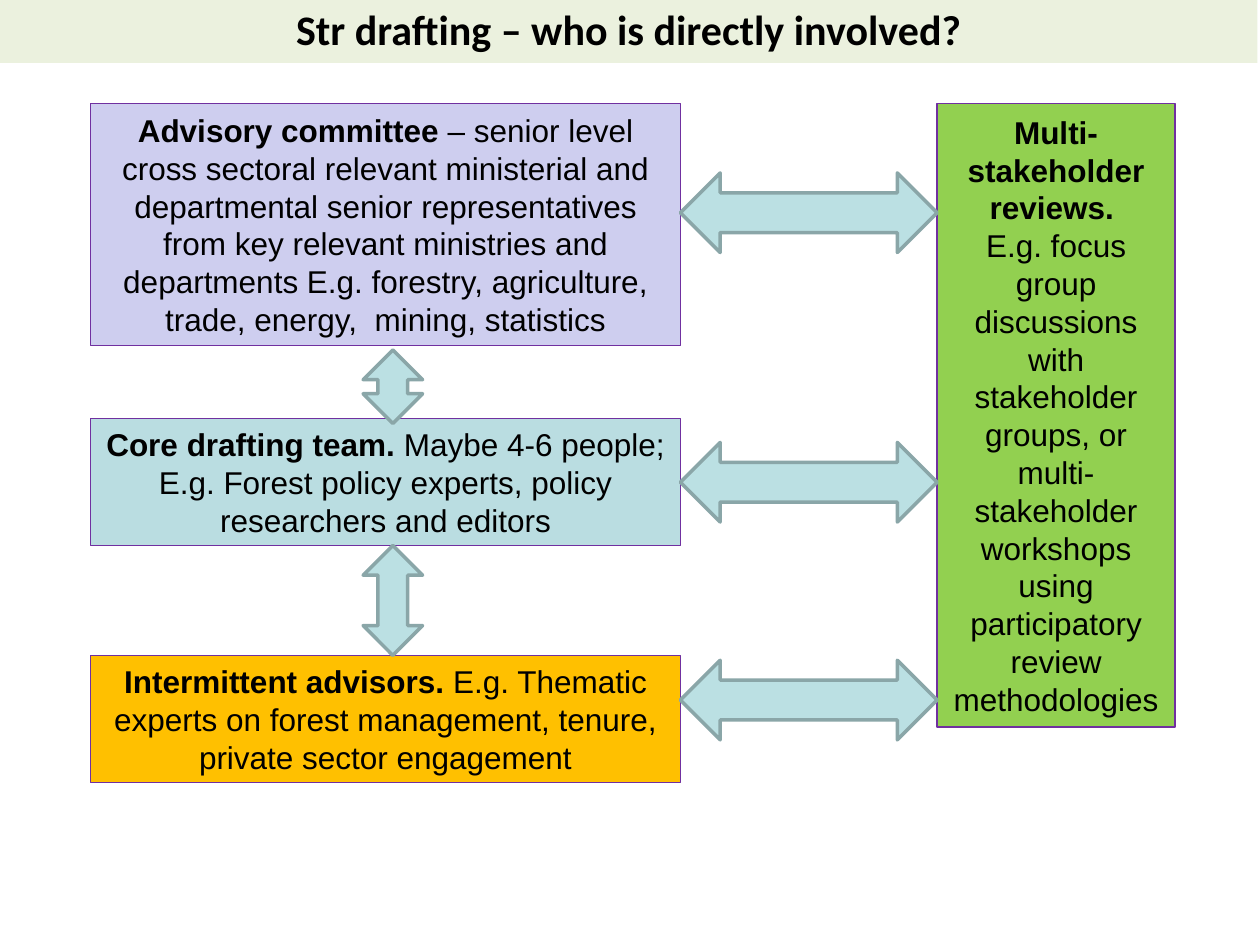
from dataclasses import dataclass

from pptx import Presentation
from pptx.dml.color import RGBColor
from pptx.enum.shapes import MSO_SHAPE
from pptx.enum.text import MSO_ANCHOR, PP_ALIGN
from pptx.slide import Slide
from pptx.util import Pt

RECTANGLE = MSO_SHAPE.RECTANGLE
ACROSS = MSO_SHAPE.LEFT_RIGHT_ARROW
UP_DOWN = MSO_SHAPE.UP_DOWN_ARROW
MIDDLE = MSO_ANCHOR.MIDDLE
CENTER = PP_ALIGN.CENTER

BLACK = RGBColor(0x00, 0x00, 0x00)
PALE_GREEN = RGBColor(0xEB, 0xF1, 0xDE)
LAVENDER = RGBColor(0xCE, 0xCE, 0xEF)
TEAL = RGBColor(0xBA, 0xDD, 0xE1)
AMBER = RGBColor(0xFF, 0xC0, 0x00)
GREEN = RGBColor(0x92, 0xD0, 0x50)
PURPLE = RGBColor(0x70, 0x30, 0xA0)
ARROW_FILL = RGBColor(0xBB, 0xE0, 0xE3)
ARROW_LINE = RGBColor(0x8A, 0xA6, 0xA8)

TEAM_LEFT, TEAM_WIDTH = 51.8, 337
REVIEW_LEFT, REVIEW_WIDTH = 535.5, 136
TEAM_RIGHT = TEAM_LEFT + TEAM_WIDTH
ADVISORY_TOP, ADVISORY_HEIGHT = 59, 138.5
CORE_TOP, ADVISORS_TOP, TEAM_HEIGHT = 239, 374.5, 72.7


@dataclass
class Diagram:
    """Draws the elements of the involvement diagram on one slide."""

    slide: Slide
    title_font: str = "Calibri"
    body_font: str = "Arial"
    title_size: float = 24
    body_size: float = 18

    def block(self, kind, left, top, width, height, fill, line=None, weight=0.75):
        shape = self.slide.shapes.add_shape(kind, Pt(left), Pt(top), Pt(width), Pt(height))
        shape.shadow.inherit = False
        shape.fill.solid()
        shape.fill.fore_color.rgb = fill
        if line is None:
            shape.line.fill.background()
        else:
            shape.line.color.rgb = line
            shape.line.width = Pt(weight)
        return shape

    def wording(self, paragraph, text, font, size, bold):
        run = paragraph.add_run()
        run.text = text
        run.font.name = font
        run.font.size = Pt(size)
        run.font.bold = bold
        run.font.color.rgb = BLACK
        paragraph.alignment = CENTER

    def title(self, text):
        banner = self.block(RECTANGLE, 0, 0, 718.5, 36, PALE_GREEN)
        banner.text_frame.vertical_anchor = MIDDLE
        heading = banner.text_frame.paragraphs[0]
        heading.line_spacing = 0.9
        self.wording(heading, text, self.title_font, self.title_size, True)

    def group(self, left, top, width, height, fill, name, details, split=False):
        box = self.block(RECTANGLE, left, top, width, height, fill, PURPLE)
        frame = box.text_frame
        frame.word_wrap = True
        frame.vertical_anchor = MIDDLE
        first = frame.paragraphs[0]
        self.wording(first, name, self.body_font, self.body_size, True)
        second = frame.add_paragraph() if split else first
        self.wording(second, details, self.body_font, self.body_size, False)

    def arrow(self, kind, left, top, width, height):
        self.block(kind, left, top, width, height, ARROW_FILL, ARROW_LINE, 2)


def main():
    presentation = Presentation()
    presentation.slide_width, presentation.slide_height = Pt(720), Pt(540)
    diagram = Diagram(presentation.slides.add_slide(presentation.slide_layouts[6]))

    diagram.title("Str drafting – who is directly involved?")
    teams = [
        (ADVISORY_TOP, ADVISORY_HEIGHT, LAVENDER, "Advisory committee ",
         "– senior level cross sectoral relevant ministerial and departmental senior "
         "representatives from key relevant ministries and departments E.g. forestry, "
         "agriculture, trade, energy,  mining, statistics"),
        (CORE_TOP, TEAM_HEIGHT, TEAL, "Core drafting team. ",
         "Maybe 4-6 people; E.g. Forest policy experts, policy researchers and editors"),
        (ADVISORS_TOP, TEAM_HEIGHT, AMBER, "Intermittent advisors. ",
         "E.g. Thematic experts on forest management, tenure, private sector engagement"),
    ]
    for top, height, fill, name, details in teams:
        diagram.group(TEAM_LEFT, top, TEAM_WIDTH, height, fill, name, details)
    diagram.group(
        REVIEW_LEFT, ADVISORY_TOP, REVIEW_WIDTH, 356.5, GREEN, "Multi-stakeholder reviews. ",
        "E.g. focus group discussions with stakeholder groups, or multi-stakeholder "
        "workshops using participatory review methodologies", split=True)

    for review_link_top in (98.8, 252.8, 377.3):
        diagram.arrow(ACROSS, TEAM_RIGHT, review_link_top, REVIEW_LEFT - TEAM_RIGHT, 45.5)
    core_bottom = CORE_TOP + TEAM_HEIGHT
    for link_top, link_bottom in ((200, 242), (core_bottom, ADVISORS_TOP)):
        diagram.arrow(UP_DOWN, 207.5, link_top, 34, link_bottom - link_top)

    presentation.save("out.pptx")


if __name__ == "__main__":
    main()
